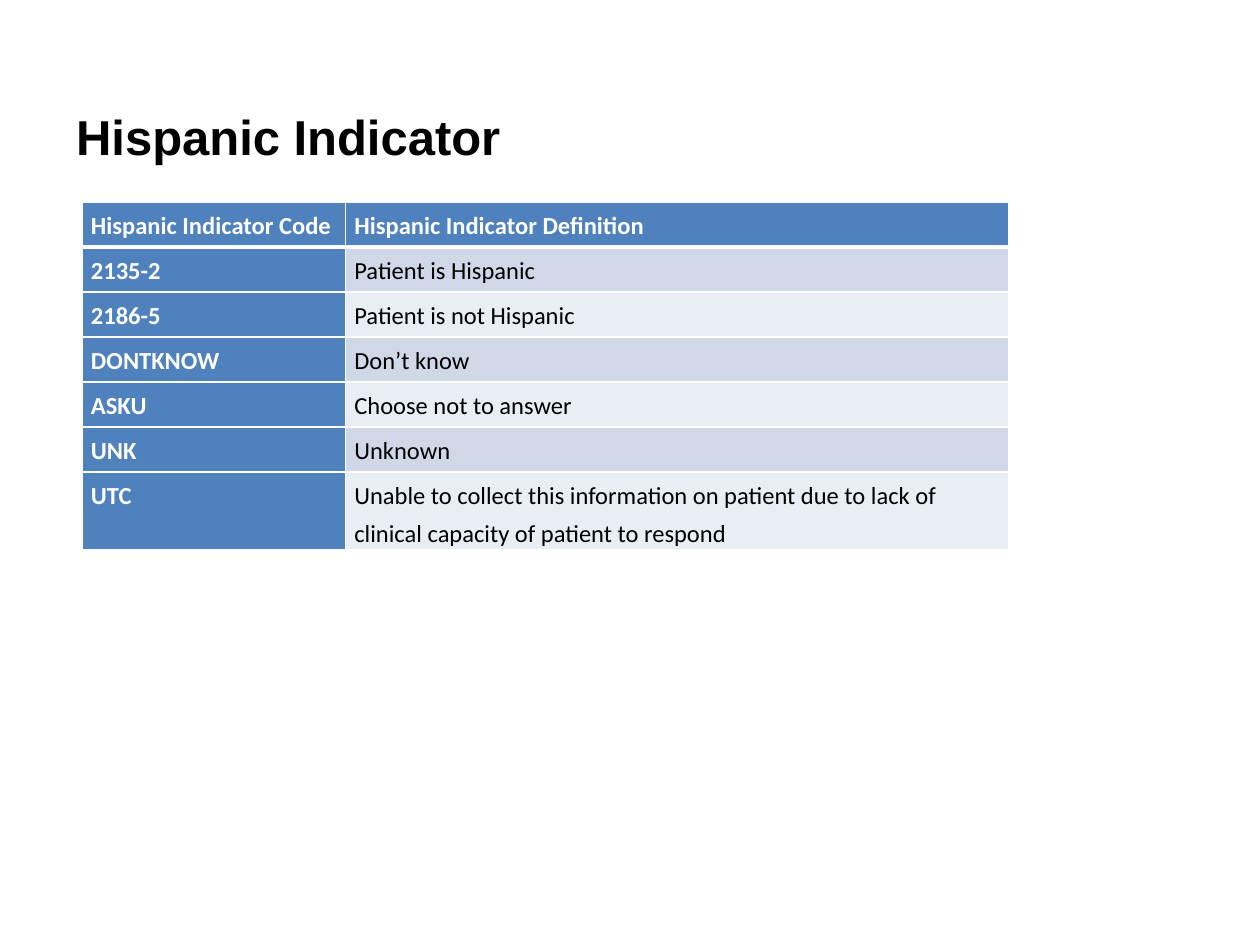
from lxml import etree
from pptx import Presentation
from pptx import util as u
from pptx.dml.color import RGBColor
from pptx.enum import text
from pptx.oxml.ns import qn

COLORS = {
    "title": "000000",
    "head": "4F81BD",
    "head_text": "FFFFFF",
    "body_text": "000000",
    "band_dark": "D0D8E8",
    "band_light": "E9EDF4",
    "border": "FFFFFF",
}
ROWS = [
    ("Hispanic Indicator Code", "Hispanic Indicator Definition"),
    ("2135-2", "Patient is Hispanic"),
    ("2186-5", "Patient is not Hispanic"),
    ("DONTKNOW", "Don’t know"),
    ("ASKU", "Choose not to answer"),
    ("UNK", "Unknown"),
    ("UTC", "Unable to collect this information on patient due to lack of "
            "clinical capacity of patient to respond"),
]


class SlideBuilder:
    title_font, title_size = "Arial", 28
    table_font, table_size = "Calibri", 14

    def __init__(self, slide):
        self.slide = slide

    def color(self, name):
        return RGBColor.from_string(COLORS[name])

    def font(self, p, name, size, color, bold):
        for r in p.runs:
            r.font.name = name
            r.font.size = u.Pt(size)
            r.font.bold = bold
            r.font.color.rgb = self.color(color)

    def title(self, words, left, top, width, height):
        sp = self.slide.shapes.title
        sp.left, sp.top, sp.width, sp.height = map(u.Pt, (left, top, width, height))
        tf = sp.text_frame
        tf.text = words
        tf.vertical_anchor = text.MSO_ANCHOR.BOTTOM
        tf.margin_left = u.Pt(25.5)
        p = tf.paragraphs[0]
        p.alignment = text.PP_ALIGN.LEFT
        self.font(p, self.title_font, self.title_size, "title", True)

    def borders(self, cell, **widths):
        """Draw the four sides, 1 pt unless a side (L, R, T, B) is given."""
        tc_pr = cell._tc.get_or_add_tcPr()
        for side in "LRTB":
            ln = etree.SubElement(tc_pr, qn(f"a:ln{side}"),
                                  w=str(u.Pt(widths.get(side, 1))))
            fill = etree.SubElement(ln, qn("a:solidFill"))
            etree.SubElement(fill, qn("a:srgbClr"), val=COLORS["border"])

    def cell(self, cell, words, fill, color, bold):
        cell.fill.solid()
        cell.fill.fore_color.rgb = self.color(fill)
        cell.margin_left = cell.margin_right = u.Pt(5)
        cell.margin_top = cell.margin_bottom = 0
        p = cell.text_frame.paragraphs[0]
        p.text = words
        p.line_spacing = 1.3
        p.space_before = p.space_after = u.Pt(3)
        self.font(p, self.table_font, self.table_size, color, bold)

    def table(self, rows, left, top, col_widths, row_height, height):
        frame = self.slide.shapes.add_table(
            len(rows), len(col_widths), u.Pt(left), u.Pt(top),
            u.Pt(sum(col_widths)), u.Pt(height))
        table = frame.table
        for column, width in zip(table.columns, col_widths):
            column.width = u.Pt(width)
        for i, row in enumerate(rows):
            table.rows[i].height = u.Pt(row_height)
            for j, words in enumerate(row):
                cell = table.cell(i, j)
                heading = i == 0 or j == 0
                band = "band_dark" if i % 2 else "band_light"
                self.borders(cell, B=3 if i == 0 else 1, T=3 if i == 1 else 1)
                self.cell(cell, words, "head" if heading else band,
                          "head_text" if heading else "body_text", heading)
        frame.height = u.Pt(height)


def main():
    prs = Presentation()
    prs.slide_width, prs.slide_height = u.Pt(720), u.Pt(540)
    builder = SlideBuilder(prs.slides.add_slide(prs.slide_layouts[5]))
    builder.title("Hispanic Indicator", 18, 27.4, 633, 70.5)
    builder.table(ROWS, 47, 115.5, (150.5, 378.7), 25.7, 196.6)
    prs.save("out.pptx")


if __name__ == "__main__":
    main()
